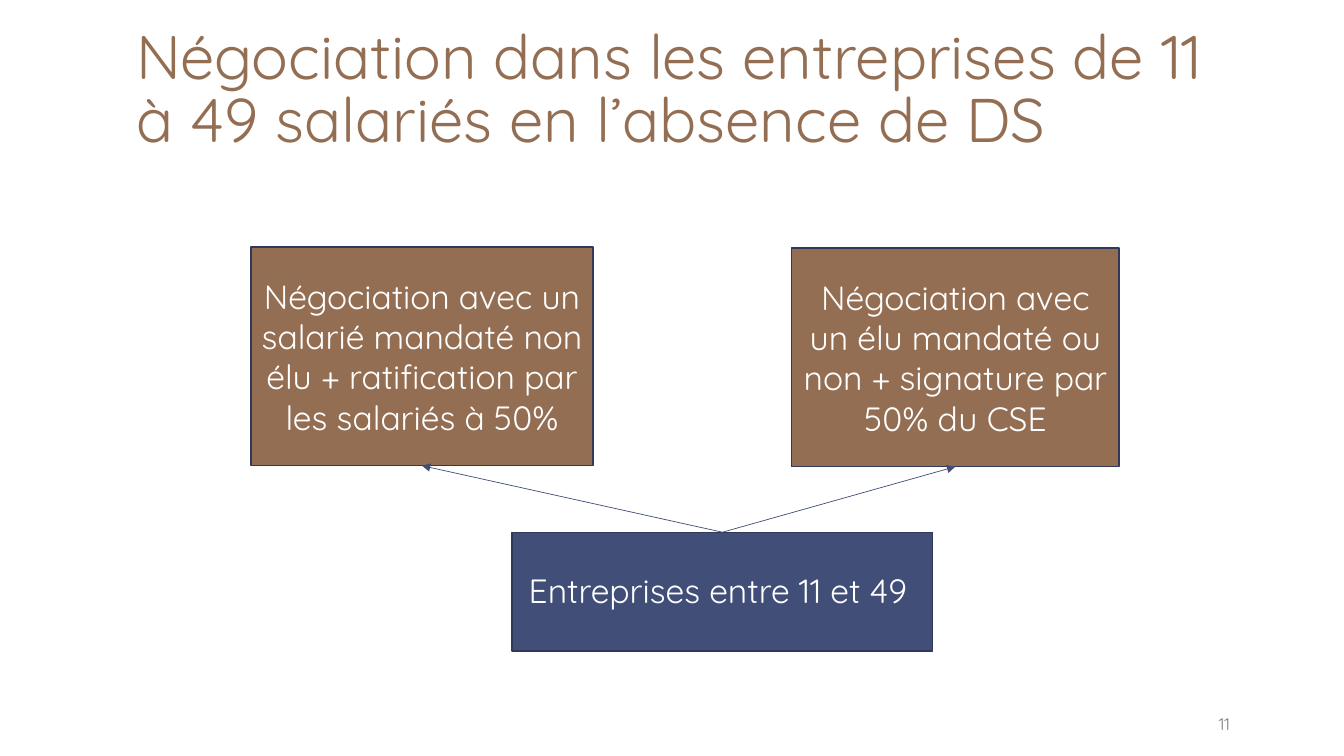
import dataclasses

import lxml.etree
import pptx
import pptx.dml.color
import pptx.enum.shapes
import pptx.enum.text
import pptx.oxml.ns
import pptx.util

Inches = pptx.util.Inches
Align = pptx.enum.text.PP_ALIGN
Anchor = pptx.enum.text.MSO_ANCHOR
TOP_SITE, BOTTOM_SITE = 0, 2


@dataclasses.dataclass(frozen=True)
class Theme:
    font: str = "Quicksand"
    brown: str = "936E53"
    blue: str = "414E77"
    outline: str = "303A58"
    white: str = "FFFFFF"
    grey: str = "808080"
    title_size: int = 44
    box_size: int = 24
    number_size: int = 12
    outline_width: float = 1
    arrow_width: float = 0.5


def rgb(value):
    return pptx.dml.color.RGBColor.from_string(value)


def write_text(shape, text, *, font, size, color, align=Align.LEFT,
               anchor=Anchor.MIDDLE, line_spacing=1.0, side_margin=0.1, end_margin=0.05):
    frame = shape.text_frame
    frame.word_wrap = True
    frame.vertical_anchor = anchor
    frame.margin_left = frame.margin_right = Inches(side_margin)
    frame.margin_top = frame.margin_bottom = Inches(end_margin)
    para = frame.paragraphs[0]
    para.alignment = align
    para.line_spacing = line_spacing
    span = para.add_run()
    span.text = text
    span.font.name = font
    span.font.size = pptx.util.Pt(size)
    span.font.color.rgb = rgb(color)


class SlideBuilder:
    def __init__(self, slide, theme):
        self.slide = slide
        self.theme = theme

    def text(self, text, area, **text_format):
        box = self.slide.shapes.add_textbox(*map(Inches, area))
        write_text(box, text, font=self.theme.font, anchor=Anchor.BOTTOM,
                   side_margin=0.13, end_margin=0.07, **text_format)

    def box(self, text, area, fill, **text_format):
        box = self.slide.shapes.add_shape(
            pptx.enum.shapes.MSO_SHAPE.RECTANGLE, *map(Inches, area))
        box.shadow.inherit = False
        box.fill.solid()
        box.fill.fore_color.rgb = rgb(fill)
        box.line.color.rgb = rgb(self.theme.outline)
        box.line.width = pptx.util.Pt(self.theme.outline_width)
        write_text(box, text, font=self.theme.font, size=self.theme.box_size,
                   color=self.theme.white, align=Align.CENTER, **text_format)
        return box

    def arrow(self, source, target):
        """Join the top of source to the bottom of target."""
        arrow = self.slide.shapes.add_connector(
            pptx.enum.shapes.MSO_CONNECTOR.STRAIGHT, 0, 0, 0, 0)
        arrow.begin_connect(source, TOP_SITE)
        arrow.end_connect(target, BOTTOM_SITE)
        arrow.line.color.rgb = rgb(self.theme.blue)
        arrow.line.width = pptx.util.Pt(self.theme.arrow_width)
        qn = pptx.oxml.ns.qn
        properties = arrow._element.spPr
        lxml.etree.SubElement(properties.find(qn("a:ln")), qn("a:tailEnd"), type="triangle")
        lxml.etree.SubElement(properties, qn("a:effectLst"))


def main():
    deck = pptx.Presentation()
    deck.slide_width, deck.slide_height = Inches(13.33), Inches(7.5)
    theme = Theme()
    page = SlideBuilder(deck.slides.add_slide(deck.slide_layouts[6]), theme)

    page.text("Négociation dans les entreprises de 11 à 49 salariés en l’absence de DS",
              (1.22, 0.08, 11.11, 1.53), size=theme.title_size, color=theme.brown,
              line_spacing=0.85)
    page.text("11", (11.12, 7, 1.21, 0.35), size=theme.number_size, color=theme.grey,
              align=Align.RIGHT)

    companies = page.box("Entreprises entre 11 et 49 ", (5.08, 5.28, 4.17, 1.18),
                         theme.blue, line_spacing=0.95, side_margin=0.13, end_margin=0.07)
    options = [
        ("Négociation avec un salarié mandaté non élu + ratification par les salariés à 50%",
         (2.49, 2.45, 3.39, 2.17)),
        ("Négociation avec un élu mandaté ou non + signature par 50% du CSE",
         (7.85, 2.46, 3.25, 2.17)),
    ]
    for text, area in options:
        page.arrow(companies, page.box(text, area, theme.brown))

    deck.save("out.pptx")


if __name__ == "__main__":
    main()
